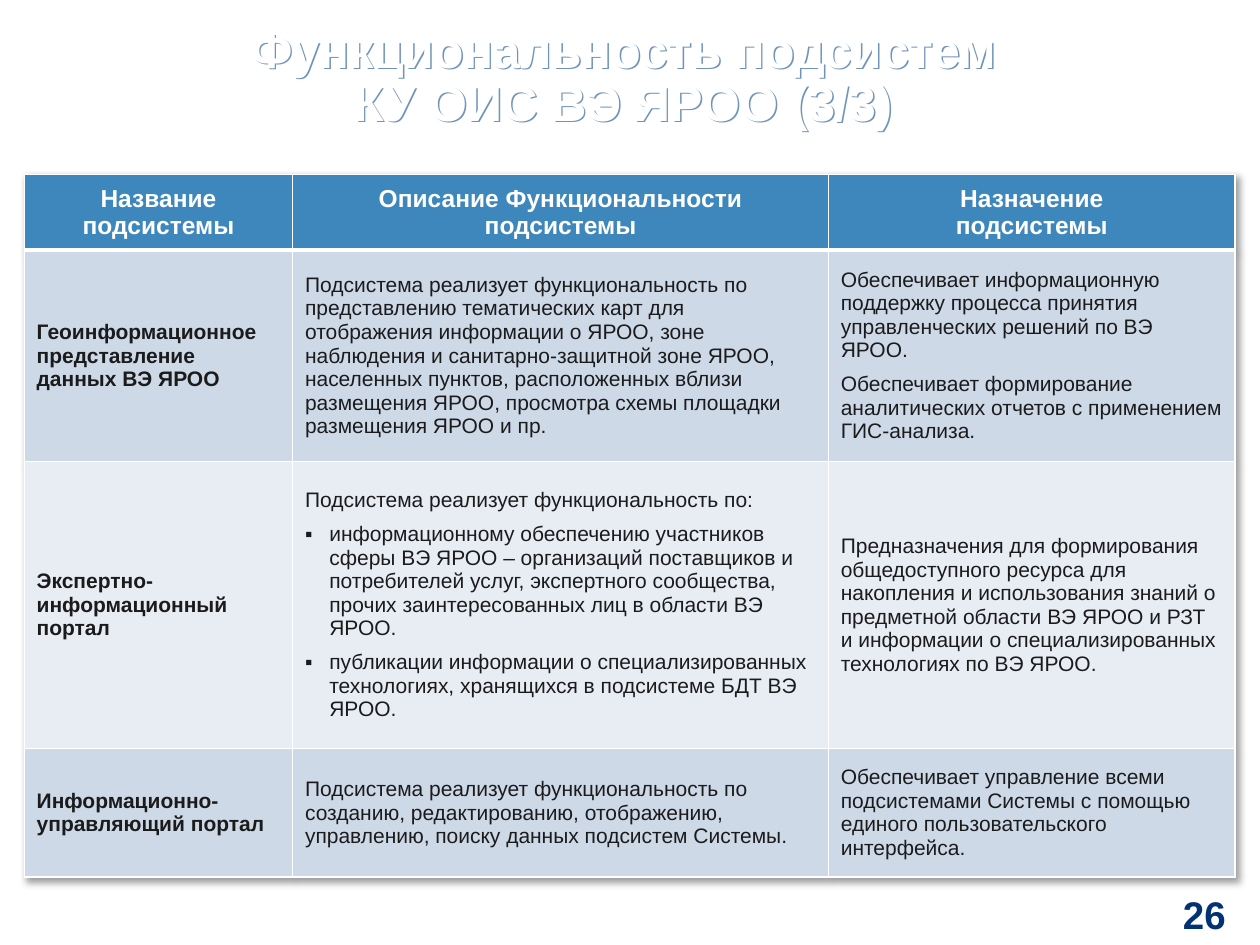
"""Build the slide on subsystem functions: a title, a table and a page number."""
from dataclasses import dataclass

from lxml import etree
from pptx import Presentation
from pptx.dml.color import RGBColor
from pptx.enum.text import MSO_ANCHOR, MSO_AUTO_SIZE, PP_ALIGN
from pptx.oxml import parse_xml
from pptx.oxml.ns import qn
from pptx.util import Cm, Pt

MID = MSO_ANCHOR.MIDDLE
FIXED = MSO_AUTO_SIZE.NONE
LEFT, CENTER, RIGHT = PP_ALIGN.LEFT, PP_ALIGN.CENTER, PP_ALIGN.RIGHT
NS = "http://schemas.openxmlformats.org/drawingml/2006/main"


@dataclass
class Theme:
    font: str = "Arial"
    white: str = "FFFFFF"
    navy: str = "003274"
    head: str = "3E87BD"
    ink: str = "1B1B1C"
    bands: tuple = ("CED9E8", "E8EDF4")
    glow: str = "3366A0"
    shade: str = "000000"
    title: int = 28
    page: int = 22
    label: int = 14
    body: int = 12


theme = Theme()


def write(para, text, size, color, bold, align):
    para.alignment = align
    run = para.add_run()
    run.text = text
    font = run.font
    font.size, font.bold = Pt(size), bold
    font.color.rgb = RGBColor.from_string(color)
    font.name = theme.font


def shadow(color, blur, dist, alpha):
    return parse_xml(
        f'<a:effectLst xmlns:a="{NS}"><a:outerShdw blurRad="{Pt(blur)}" '
        f'dist="{Pt(dist)}" dir="2700000" algn="tl" rotWithShape="0">'
        f'<a:srgbClr val="{color}"><a:alpha val="{alpha}000"/></a:srgbClr>'
        "</a:outerShdw></a:effectLst>")


heads = [
    ["Название подсистемы"],
    ["Описание Функциональности", "подсистемы"],
    ["Назначение", "подсистемы"],
]
rows = [
    heads,
    [
        ["Геоинформационное представление данных ВЭ ЯРОО"],
        ["Подсистема реализует функциональность по представлению тематических "
         "карт для отображения информации о ЯРОО, зоне наблюдения и "
         "санитарно-защитной зоне ЯРОО, населенных пунктов, расположенных "
         "вблизи размещения ЯРОО, просмотра схемы площадки размещения ЯРОО и пр."],
        ["Обеспечивает информационную поддержку процесса принятия "
         "управленческих решений по ВЭ ЯРОО.",
         "Обеспечивает формирование аналитических отчетов с применением "
         "ГИС-анализа."],
    ],
    [
        ["Экспертно-информационный портал"],
        ["Подсистема реализует функциональность по:",
         "▪информационному обеспечению участников сферы ВЭ ЯРОО – организаций "
         "поставщиков и потребителей услуг, экспертного сообщества, прочих "
         "заинтересованных лиц в области ВЭ ЯРОО.",
         "▪публикации информации о специализированных технологиях, хранящихся "
         "в подсистеме БДТ ВЭ ЯРОО."],
        ["Предназначения для формирования общедоступного ресурса для "
         "накопления и использования знаний о предметной области ВЭ ЯРОО и РЗТ "
         "и информации о специализированных технологиях по ВЭ ЯРОО."],
    ],
    [
        ["Информационно-управляющий портал"],
        ["Подсистема реализует функциональность по созданию, редактированию, "
         "отображению, управлению, поиску данных подсистем Системы."],
        ["Обеспечивает управление всеми подсистемами Системы с помощью "
         "единого пользовательского интерфейса."],
    ],
]

deck = Presentation()
deck.slide_width, deck.slide_height = Cm(25.4), Cm(19.05)
slide = deck.slides.add_slide(deck.slide_layouts[5])

title = slide.shapes.title
title.left, title.top, title.width, title.height = Cm(4.9), Cm(0), Cm(15.32), Cm(3.18)
title.fill.background()
title._element.spPr.append(shadow(theme.glow, 0, 1.2, 70))
page = slide.shapes.add_textbox(Cm(23.14), Cm(17.91), Cm(2.26), Cm(1.04))
for box in (title, page):
    frame = box.text_frame
    frame.word_wrap, frame.auto_size, frame.vertical_anchor = True, FIXED, MID
    frame.margin_left = frame.margin_right = frame.margin_top = frame.margin_bottom = 0
page.text_frame.margin_right = Cm(0.69)

para = title.text_frame.paragraphs[0]
para.line_spacing = 0.9
write(para, "Функциональность подсистем КУ ОИС ВЭ ЯРОО (3/3)",
      theme.title, theme.white, True, CENTER)
write(page.text_frame.paragraphs[0], "26", theme.page, theme.navy, True, RIGHT)

widths = [5.41, 10.8, 8.2]
heights = [1.52, 4.26, 5.79, 2.59]
grid = slide.shapes.add_table(len(rows), len(widths), Cm(0.49), Cm(3.52),
                              Cm(sum(widths)), Cm(sum(heights)))
table = grid.table
table._tbl.tblPr.insert(0, shadow(theme.shade, 4, 3, 40))
for col, wide in zip(table.columns, widths):
    col.width = Cm(wide)
for row, high in zip(table.rows, heights):
    row.height = Cm(high)

for r, row in enumerate(rows):
    top = r == 0
    for c, texts in enumerate(row):
        cell = table.cell(r, c)
        cell.vertical_anchor = MID
        cell.margin_left = cell.margin_right = Cm(0.25)
        cell.margin_top = cell.margin_bottom = Cm(0.13)
        props = cell._tc.get_or_add_tcPr()
        for side in ("lnL", "lnR", "lnT", "lnB"):
            thick = (top and side == "lnB") or (r == 1 and side == "lnT")
            line = etree.SubElement(props, qn(f"a:{side}"), w=str(Pt(3 if thick else 1)))
            fill = etree.SubElement(line, qn("a:solidFill"))
            etree.SubElement(fill, qn("a:srgbClr"), val=theme.white)
        cell.fill.solid()
        shade = theme.head if top else theme.bands[(r - 1) % 2]
        cell.fill.fore_color.rgb = RGBColor.from_string(shade)
        frame = cell.text_frame
        for i, text in enumerate(texts):
            para = frame.add_paragraph() if i else frame.paragraphs[0]
            if i and not top:
                para.space_before = Pt(6)
            if text.startswith("▪"):
                form = para._p.get_or_add_pPr()
                form.set("marL", str(Cm(0.49)))
                form.set("indent", str(-Cm(0.49)))
                etree.SubElement(form, qn("a:buFont"), typeface=theme.font)
                etree.SubElement(form, qn("a:buChar"), char="▪")
            write(para, text.lstrip("▪"), theme.label if top else theme.body,
                  theme.white if top else theme.ink, top or c == 0,
                  CENTER if top else LEFT)

deck.save("out.pptx")
